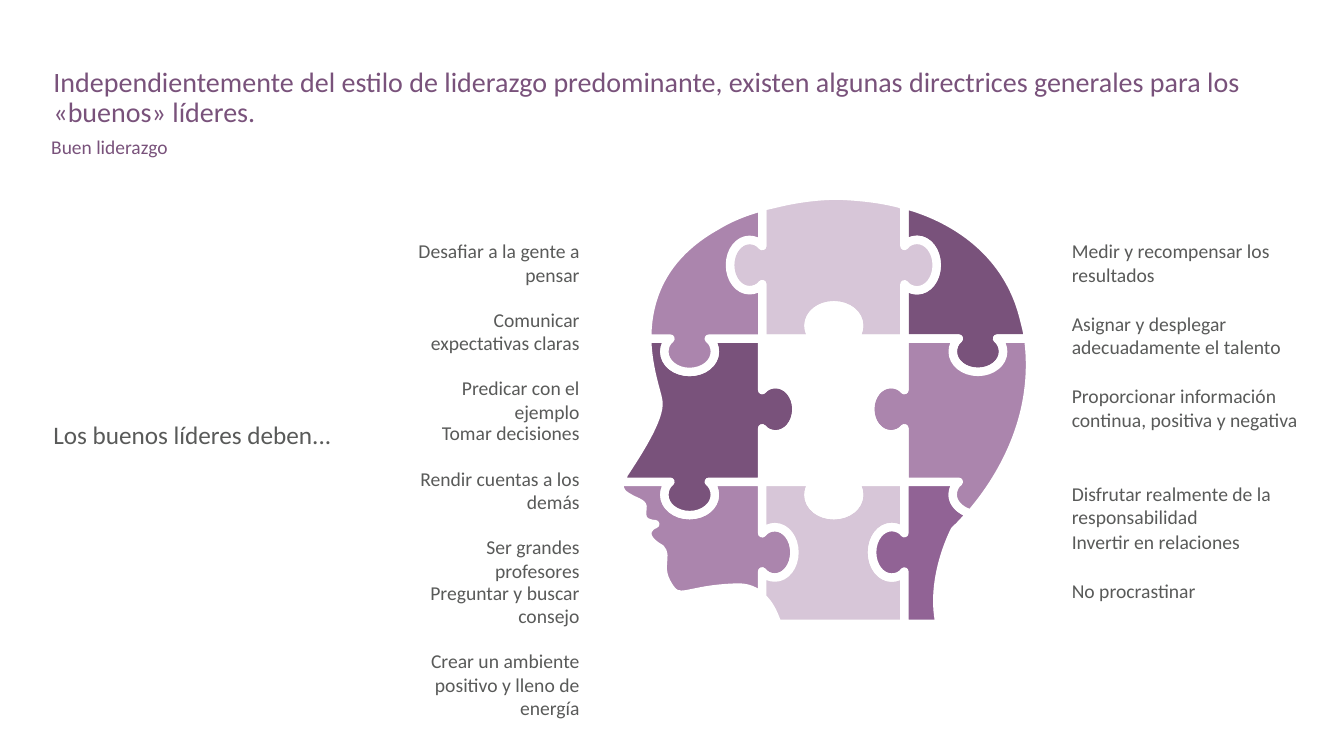
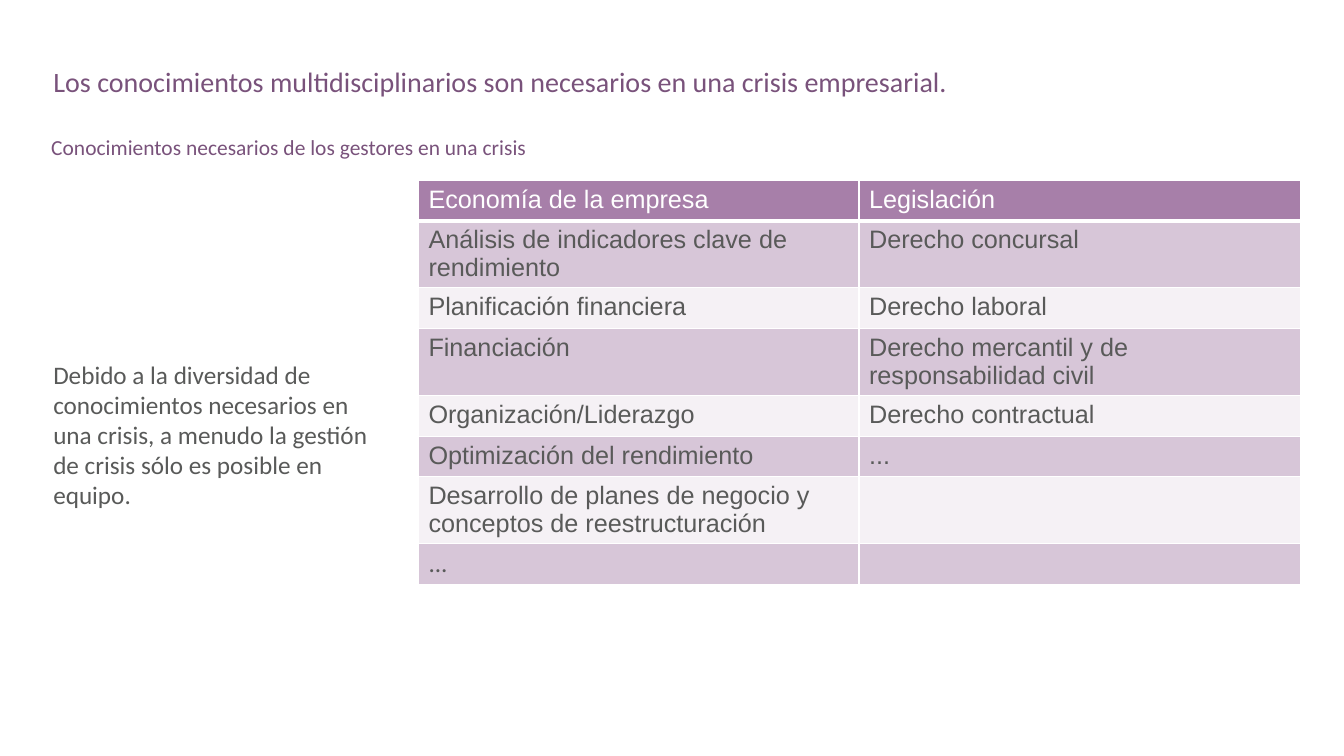
from lxml import etree
from pptx import Presentation
from pptx.dml.color import RGBColor
from pptx.enum.text import MSO_ANCHOR, MSO_AUTO_SIZE, PP_ALIGN
from pptx.oxml.ns import qn
from pptx.util import Emu, Pt

TOP, MIDDLE = MSO_ANCHOR.TOP, MSO_ANCHOR.MIDDLE
LEFT, RIGHT = PP_ALIGN.LEFT, PP_ALIGN.RIGHT
NO_FIT = MSO_AUTO_SIZE.NONE

PX = 9144
SLIDE_W, SLIDE_H = 1333, 750
TEXT_FONT, TABLE_FONT = "Calibri", "Arial"
COLORS = {
    "white": "FFFFFF", "text": "595A59", "plum": "79527B", "violet": "916395",
    "mauve": "AB85AD", "lilac": "D7C6D8", "header": "A77FA9", "pale": "F5F1F5",
}
WIDE, SLIM = (10, 5), (4, 2)

LEADERSHIP = {
    "title": "Independientemente del estilo de liderazgo predominante, existen algunas "
             "directrices generales para los «buenos» líderes.",
    "subtitle": ("Buen liderazgo", 13.9),
    "message": "Los buenos líderes deben...",
}
CRISIS = {
    "title": "Los conocimientos multidisciplinarios son necesarios en una crisis empresarial.",
    "subtitle": ("Conocimientos necesarios de los gestores en una crisis", 15.3),
    "message": "Debido a la diversidad de conocimientos necesarios en una crisis, "
               "a menudo la gestión de crisis sólo es posible en equipo.",
}

ADVICE_TOP, ADVICE_GAP, ADVICE_RIGHT = 235, 17, 579
ONE_LINE, TWO_LINES = 28, 51
LEFT_ADVICE = [
    ("Desafiar a la gente a pensar", TWO_LINES, 187),
    ("Comunicar expectativas claras", TWO_LINES, 187),
    ("Predicar con el ejemplo", ONE_LINE, 187),
    ("Tomar decisiones", ONE_LINE, 187),
    ("Rendir cuentas a los demás", TWO_LINES, 187),
    ("Ser grandes profesores", ONE_LINE, 187),
    ("Preguntar y buscar consejo", TWO_LINES, 204),
    ("Crear un ambiente positivo y lleno de energía", TWO_LINES, 204),
]
RIGHT_ADVICE = [
    (235, 72, TWO_LINES, [
        "Medir y recompensar los resultados",
        "Asignar y desplegar adecuadamente el talento",
        "Proporcionar información continua, positiva y negativa",
    ]),
    (476, 48, ONE_LINE, [
        "Disfrutar realmente de la responsabilidad",
        "Invertir en relaciones",
        "No procrastinar",
    ]),
]

KNOWLEDGE = [
    ("Economía de la empresa", "Legislación"),
    ("Análisis de indicadores clave de rendimiento", "Derecho concursal"),
    ("Planificación financiera", "Derecho laboral"),
    ("Financiación", "Derecho mercantil y de responsabilidad civil"),
    ("Organización/Liderazgo", "Derecho contractual"),
    ("Optimización del rendimiento", "..."),
    ("Desarrollo de planes de negocio y conceptos de reestructuración", ""),
    ("...", ""),
]
ROW_HEIGHTS = [40, 41, 41, 41, 41, 40, 49, 41]
COLUMN_WIDTHS = [437, 438]

X1, X2, Y1, Y2 = 756, 897, 336, 478
KNOB_DEPTH = 33
KNOB = [(-19, 0), (-23, 3), (-25, 8), (-25, 13), (-25, 24), (-14, 33), (0, 33),
        (14, 33), (25, 24), (25, 13), (25, 8), (23, 3), (19, 0)]
HALF_KNOB = KNOB[:4] + [(-25, 21), (-18, 28), (-9, 31)]
FOREHEAD = [(642, 332), (643, 296), (657, 254), (711, 224),
            (724, 216), (739, 210), (754, 206)]
CROWN = [(769, 202), (789, 197), (811, 194), (832, 194),
         (853, 195), (873, 197), (892, 202)]
BACK = [(907, 206), (959, 223), (1001, 259), (1015, 314),
        (1016, 318), (1017, 322), (1018, 326)]
NOSE = [(617, 475), (617, 474), (618, 472), (619, 470), (628, 456), (656, 415),
        (653, 398), (652, 390), (643, 367), (642, 338)]
LOWER_BACK = [(1020, 337), (1030, 415), (991, 476), (966, 506)]
MOUTH_AND_CHIN = [(756, 593), (750, 586), (741, 582), (728, 583), (679, 585), (674, 599),
                  (663, 581), (651, 562), (663, 552), (655, 544), (655, 544), (643, 538),
                  (642, 530), (642, 522), (650, 520), (650, 520), (650, 520), (637, 520),
                  (637, 511), (636, 502), (642, 502), (628, 496), (618, 491), (613, 487),
                  (615, 480)]
THROAT = [(770, 616), (767, 608), (763, 599), (756, 593)]
NECK = [(962, 510), (954, 520), (947, 526), (947, 526),
        (947, 526), (922, 573), (932, 619)]


def color(name):
    return RGBColor.from_string(COLORS[name])


def box(*lengths):
    return [Emu(length * PX) for length in lengths]


def straight(*points):
    return [(x, y, False) for x, y in points]


def curve(points):
    return [(x, y, i % 3 > 0) for i, (x, y) in enumerate(points)]


def knob_across(x, y, side, knob=KNOB):
    return curve([(x + along, y + side * out) for along, out in knob])


def knob_down(x, y, side, depth):
    return curve([(x + side * out * depth / KNOB_DEPTH, y + along) for along, out in KNOB])


def back(edge):
    return edge[::-1]


def head_pieces():
    brow, lip = knob_across(684, Y1, 1), knob_across(684, Y2, 1)
    ceiling, floor = knob_across(827, Y1, -1), knob_across(827, Y2, 1)
    ear, nape = knob_across(970, Y1, 1), knob_across(970, Y2, 1, HALF_KNOB)
    (left_top, right_top), (left_mid, right_mid), (left_low, right_low) = [
        (knob_down(X1, y, side, depth), knob_down(X2, y, -side, depth))
        for y, side, depth in ((263, -1, 32), (406, 1, 34), (548, 1, 32))]
    top_left, top_right = straight((X1, Y1)), straight((X2, Y1))
    low_left, low_right = straight((X1, Y2)), straight((X2, Y2))
    temple, nose_tip = straight((642, Y1)), straight((616, Y2))
    ear_end, nape_end = straight((1020, Y1)), straight((963, 510))
    return [
        ("mauve", nose_tip + lip + low_left + left_low + curve(MOUTH_AND_CHIN)),
        ("lilac", low_left + floor + low_right + right_low
         + straight((X2, 619), (771, 619)) + curve(THROAT) + back(left_low)),
        ("plum", temple + brow + top_left + left_mid + low_left + back(lip)
         + nose_tip + curve(NOSE)),
        ("plum", straight((X2, 203)) + curve(BACK) + ear_end + back(ear) + top_right
         + back(right_top)),
        ("violet", low_right + nape + nape_end + curve(NECK) + straight((X2, 619))
         + back(right_low)),
        ("mauve", top_right + ear + ear_end + curve(LOWER_BACK) + nape_end
         + back(nape) + low_right + back(right_mid)),
        ("lilac", straight((X1, 205)) + curve(CROWN) + straight((X2, 204)) + right_top
         + top_right + back(ceiling) + top_left + back(left_top)),
        ("mauve", temple + curve(FOREHEAD) + straight((X1, 205)) + left_top + top_left
         + back(brow)),
        ("white", top_left + ceiling + top_right + right_mid + low_right + back(floor)
         + low_left + back(left_mid)),
    ]


def write(frame, text, size, tint, align=LEFT, spacing=None, font=TEXT_FONT):
    paragraph = frame.paragraphs[0]
    paragraph.alignment = align
    if spacing:
        paragraph.line_spacing = spacing
    run = paragraph.add_run()
    run.text = text
    run.font.name = font
    run.font.size = Pt(size)
    run.font.bold = False
    run.font.color.rgb = color(tint)


def set_frame(frame, anchor, insets):
    frame.word_wrap = True
    frame.auto_size = NO_FIT
    frame.vertical_anchor = anchor
    frame.margin_left, frame.margin_top = box(*insets)
    frame.margin_right, frame.margin_bottom = box(*insets)


def add_text(slide, place, text, size, tint, insets=WIDE, anchor=TOP, align=LEFT, spacing=None):
    frame = slide.shapes.add_textbox(*box(*place)).text_frame
    set_frame(frame, anchor, insets)
    write(frame, text, size, tint, align, spacing)


def add_slide(deck, content):
    slide = deck.slides.add_slide(deck.slide_layouts[5])
    title = slide.shapes.title
    title.left, title.top, title.width, title.height = box(43, 63, 1254, 64)
    set_frame(title.text_frame, TOP, WIDE)
    write(title.text_frame, content["title"], 20, "plum", spacing=0.9)
    subtitle, size = content["subtitle"]
    add_text(slide, (41, 135, 1256, 28), subtitle, size, "plum", spacing=0.7)
    add_text(slide, (43, 179, 349, 504), content["message"], 18, "text", anchor=MIDDLE)
    return slide


def draw_curves(piece, outline):
    outline_path = piece._element.spPr.find(".//" + qn("a:path"))
    for command in list(outline_path):
        outline_path.remove(command)
    waiting = []
    for i, (x, y, is_control) in enumerate(outline):
        waiting.append((round(x * PX) - piece.left, round(y * PX) - piece.top))
        if is_control:
            continue
        kind = "a:moveTo" if i == 0 else "a:cubicBezTo" if len(waiting) == 3 else "a:lnTo"
        command = etree.SubElement(outline_path, qn(kind))
        for px, py in waiting:
            etree.SubElement(command, qn("a:pt"), x=str(px), y=str(py))
        waiting = []
    etree.SubElement(outline_path, qn("a:close"))


def add_piece(slide, tint, outline):
    anchors = [(x * PX, y * PX) for x, y, is_control in outline if not is_control]
    builder = slide.shapes.build_freeform(*anchors[0], scale=1.0)
    builder.add_line_segments(anchors[1:], close=True)
    piece = builder.convert_to_shape()
    draw_curves(piece, outline)
    piece.shadow.inherit = False
    piece.fill.solid()
    piece.fill.fore_color.rgb = color(tint)
    piece.line.color.rgb = color("white")
    piece.line.width = Pt(6)
    etree.SubElement(piece._element.spPr.find(qn("a:ln")), qn("a:round"))


def add_advice(slide):
    top = ADVICE_TOP
    for text, height, width in LEFT_ADVICE:
        add_text(slide, (ADVICE_RIGHT - width, top, width, height), text, 14, "text",
                 SLIM, align=RIGHT)
        top += height + ADVICE_GAP
    for start, step, height, texts in RIGHT_ADVICE:
        for i, text in enumerate(texts):
            add_text(slide, (1059, start + i * step, 246, height), text, 14, "text", SLIM)


def set_borders(cell, widths):
    properties = cell._tc.get_or_add_tcPr()
    for i, (side, width) in enumerate(widths.items()):
        line = etree.Element(qn("a:" + side), w=str(Pt(width)))
        fill = etree.SubElement(line, qn("a:solidFill"))
        etree.SubElement(fill, qn("a:srgbClr"), val=COLORS["white"])
        properties.insert(i, line)


def add_knowledge(slide):
    table = slide.shapes.add_table(
        len(KNOWLEDGE), len(COLUMN_WIDTHS),
        *box(415, 179, sum(COLUMN_WIDTHS), sum(ROW_HEIGHTS))).table
    for column, width in zip(table.columns, COLUMN_WIDTHS):
        column.width = Emu(width * PX)
    for r, (texts, height) in enumerate(zip(KNOWLEDGE, ROW_HEIGHTS)):
        table.rows[r].height = Emu(height * PX)
        background = "header" if r == 0 else "lilac" if r % 2 else "pale"
        font = TEXT_FONT if r == len(KNOWLEDGE) - 1 else TABLE_FONT
        for c, text in enumerate(texts):
            cell = table.cell(r, c)
            cell.fill.solid()
            cell.fill.fore_color.rgb = color(background)
            set_borders(cell, {"lnL": 1, "lnR": 1, "lnT": 3 if r == 1 else 1,
                               "lnB": 3 if r == 0 else 1})
            if text:
                write(cell.text_frame, text, 18, "text" if r else "white", font=font)


def main():
    deck = Presentation()
    deck.slide_width, deck.slide_height = box(SLIDE_W, SLIDE_H)
    leadership = add_slide(deck, LEADERSHIP)
    for tint, outline in head_pieces():
        add_piece(leadership, tint, outline)
    add_advice(leadership)
    add_knowledge(add_slide(deck, CRISIS))
    deck.save("out.pptx")


if __name__ == "__main__":
    main()
